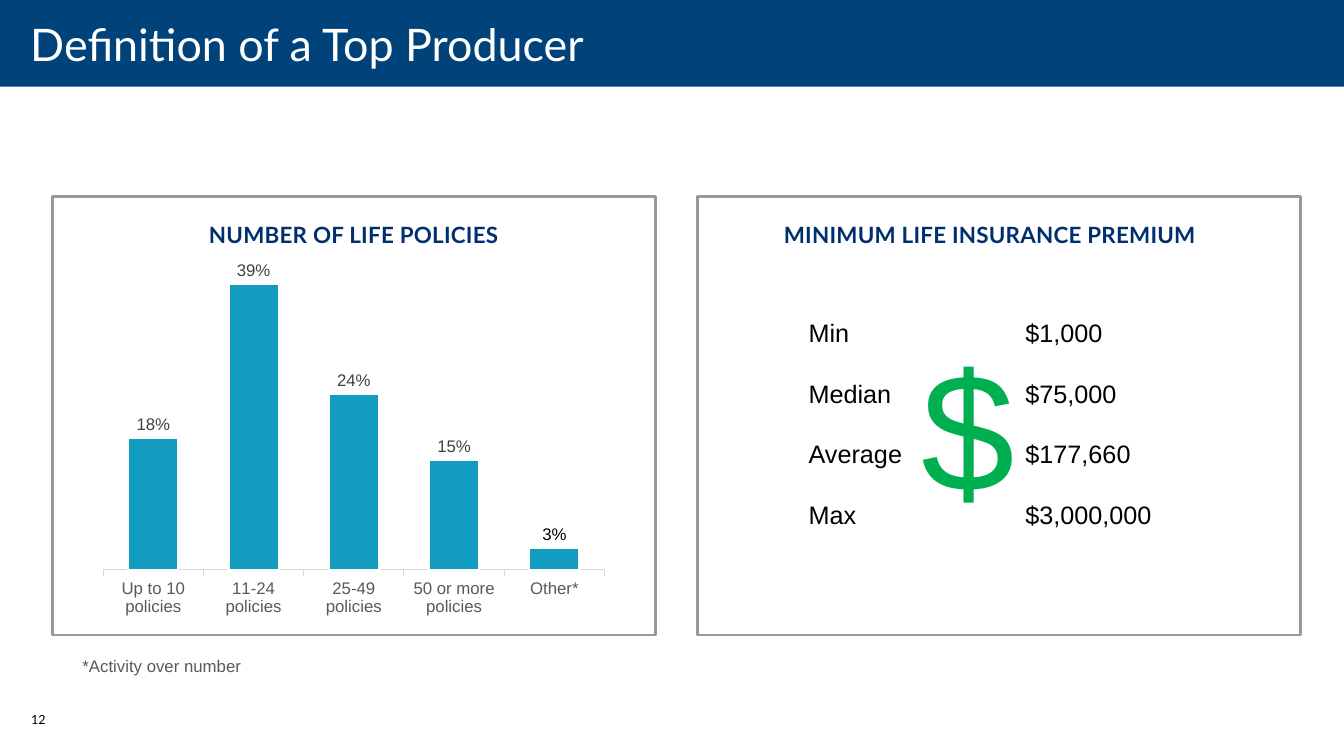
from pptx import Presentation
from pptx.chart.data import CategoryChartData
from pptx.dml.color import RGBColor
from pptx.enum.chart import XL_CHART_TYPE, XL_LABEL_POSITION, XL_TICK_MARK
from pptx.enum.shapes import MSO_SHAPE
from pptx.enum.text import MSO_ANCHOR, MSO_AUTO_SIZE, PP_ALIGN
from pptx.util import Inches, Pt
from lxml import etree

LEFT, CENTER = PP_ALIGN.LEFT, PP_ALIGN.CENTER
TOP, MIDDLE = MSO_ANCHOR.TOP, MSO_ANCHOR.MIDDLE
RECTANGLE = MSO_SHAPE.RECTANGLE
COLUMNS = XL_CHART_TYPE.COLUMN_CLUSTERED
OUTSIDE_END = XL_LABEL_POSITION.OUTSIDE_END
NO_TICK, OUTSIDE_TICK = XL_TICK_MARK.NONE, XL_TICK_MARK.OUTSIDE

# Theme: every colour, and each type style as (font, size, colour, bold)
THEME = {
    "white": "FFFFFF", "band": "00437B", "frame": "9D9795",
    "bar": "129DC0", "axis": "D9D9D9",
    "title": ("Lato", 32, "FFFFFF", False),
    "heading": ("Lato", 16, "002F70", True),
    "figure": ("Arial", 18, "000000", False),
    "dollar": ("Arial", 120, "00B050", False),
    "note": ("Arial", 12, "595959", False),
    "label": ("Arial", 12, "404040", False),
    "last label": ("Arial", 12, "000000", False),
    "number": ("Lato", 9, "000000", False),
}


def style_font(font, style):
    name, size, color, bold = THEME[style]
    for attribute, value in {"name": name, "size": Pt(size), "bold": bold}.items():
        setattr(font, attribute, value)
    font.color.rgb = RGBColor.from_string(color)


def write_text(shape, text, style, align=LEFT, anchor=TOP, wrap=True):
    frame = shape.text_frame
    frame.text = text
    settings = {"word_wrap": wrap, "auto_size": MSO_AUTO_SIZE.NONE,
                "vertical_anchor": anchor}
    for attribute, value in settings.items():
        setattr(frame, attribute, value)
    paragraph = frame.paragraphs[0]
    paragraph.alignment = align
    style_font(paragraph.runs[0].font, style)
    return paragraph


presentation = Presentation()
presentation.slide_width = Inches(13.33)
presentation.slide_height = Inches(7.5)
slide = presentation.slides.add_slide(presentation.slide_layouts[5])
shapes = slide.shapes

# Grid: two equal panels
panel_lefts = (0.52, 6.92)
panel_top, panel_width, panel_height = 1.95, 5.98, 4.35

# Panel frames
for left in panel_lefts:
    panel = shapes.add_shape(RECTANGLE, Inches(left), Inches(panel_top),
                             Inches(panel_width), Inches(panel_height))
    panel.shadow.inherit = False
    panel.fill.background()
    panel.line.color.rgb = RGBColor.from_string(THEME["frame"])
    panel.line.width = Pt(2)

# Title band, with the title in front of it
band = shapes.add_shape(RECTANGLE, 0, 0, presentation.slide_width, Inches(0.86))
band.shadow.inherit = False
band.fill.solid()
band.fill.fore_color.rgb = RGBColor.from_string(THEME["band"])
band.line.fill.background()

title = shapes.title
title.element.getparent().append(title.element)
title_box = {"left": 0, "top": Inches(-0.05),
             "width": presentation.slide_width, "height": Inches(0.97)}
for attribute, value in title_box.items():
    setattr(title, attribute, value)
write_text(title, "Definition of a Top Producer", "title", anchor=MIDDLE, wrap=False)
title_margins = {"margin_left": 0.3, "margin_right": 0.2,
                 "margin_top": 0, "margin_bottom": 0}
for attribute, value in title_margins.items():
    setattr(title.text_frame, attribute, Inches(value))

# Panel headings
headings = ((panel_lefts[0], "NUMBER OF LIFE POLICIES"),
            (panel_lefts[1] - 0.09, "MINIMUM LIFE INSURANCE PREMIUM"))
for left, text in headings:
    heading = shapes.add_textbox(Inches(left), Inches(2.08),
                                 Inches(panel_width), Inches(0.44))
    paragraph = write_text(heading, text, "heading", CENTER, MIDDLE)
    paragraph.line_spacing = 1.2
    paragraph.space_after = Pt(12.6)
    paragraph.runs[0].font._element.set("spc", "20")

# Column chart of policies
chart_data = CategoryChartData(number_format="0%")
chart_data.categories = ["Up to 10 policies", "11-24 policies", "25-49 policies",
                         "50 or more policies", "Other*"]
chart_data.add_series("Series 1", (0.18, 0.39, 0.24, 0.15, 0.03))
chart = shapes.add_chart(COLUMNS, Inches(0.92), Inches(2.3),
                         Inches(5.18), Inches(3.9), chart_data).chart
chart.has_legend = False
chart.has_title = False
style_font(chart.font, "note")

value_axis = chart.value_axis
for attribute, value in {"minimum_scale": 0, "maximum_scale": 0.45,
                         "has_major_gridlines": False, "visible": False}.items():
    setattr(value_axis, attribute, value)
category_axis = chart.category_axis
category_axis.major_tick_mark = OUTSIDE_TICK
category_axis.minor_tick_mark = NO_TICK
category_axis.format.line.color.rgb = RGBColor.from_string(THEME["axis"])
category_axis.format.line.width = Pt(0.75)
style_font(category_axis.tick_labels.font, "note")

plot = chart.plots[0]
plot.gap_width = 100
plot.vary_by_categories = False
bars = plot.series[0]
bars.invert_if_negative = False
bars.format.fill.solid()
bars.format.fill.fore_color.rgb = RGBColor.from_string(THEME["bar"])
bars.format.line.color.rgb = RGBColor.from_string(THEME["white"])
bars.format.line.width = Pt(1.5)
labels = bars.data_labels
for attribute, value in {"show_value": True, "number_format": "0%",
                         "number_format_is_linked": False,
                         "position": OUTSIDE_END}.items():
    setattr(labels, attribute, value)
style_font(labels.font, "label")
last_label = bars.points[4].data_label
style_font(last_label.font, "last label")
last_label.position = OUTSIDE_END

# Plot area as shares of the chart
plot_area = chart._chartSpace.chart.plotArea
chart_namespace = "{" + plot_area.nsmap["c"] + "}"
for old_layout in plot_area.findall(chart_namespace + "layout"):
    plot_area.remove(old_layout)
layout = etree.Element(chart_namespace + "layout")
plot_area.insert(0, layout)
manual_layout = etree.SubElement(layout, chart_namespace + "manualLayout")
for tag, value in (("layoutTarget", "inner"), ("xMode", "edge"), ("yMode", "edge"),
                   ("x", "0.02"), ("y", "0.02"), ("w", "0.96"), ("h", "0.84")):
    etree.SubElement(manual_layout, chart_namespace + tag).set("val", value)

# Premium table, with an empty header row
premiums = (("", ""), ("Min", "$1,000"), ("Median", "$75,000"),
            ("Average", "$177,660"), ("Max", "$3,000,000"))
table = shapes.add_table(len(premiums), 2, Inches(7.92), Inches(2.52),
                         Inches(4.3), Inches(3.01)).table
table.horz_banding = False
for row, values in enumerate(premiums):
    for column, text in enumerate(values):
        cell = table.cell(row, column)
        cell.fill.background()
        cell.text = text
        style_font(cell.text_frame.paragraphs[0].font, "figure")

# Dollar sign between the columns
dollar = shapes.add_shape(RECTANGLE, Inches(9.03), Inches(3.16),
                          Inches(1.14), Inches(2.12))
dollar.shadow.inherit = False
dollar.fill.solid()
dollar.fill.fore_color.rgb = RGBColor.from_string(THEME["white"])
dollar.line.fill.background()
write_text(dollar, "$", "dollar", CENTER, wrap=False)

# Footnote and slide number
small_texts = (((0.72, 6.46, 3.14, 0.3), "*Activity over number", "note"),
               ((0.21, 7.01, 0.49, 0.4), "12", "number"))
for box, text, style in small_texts:
    write_text(shapes.add_textbox(*map(Inches, box)), text, style)

presentation.save("out.pptx")
